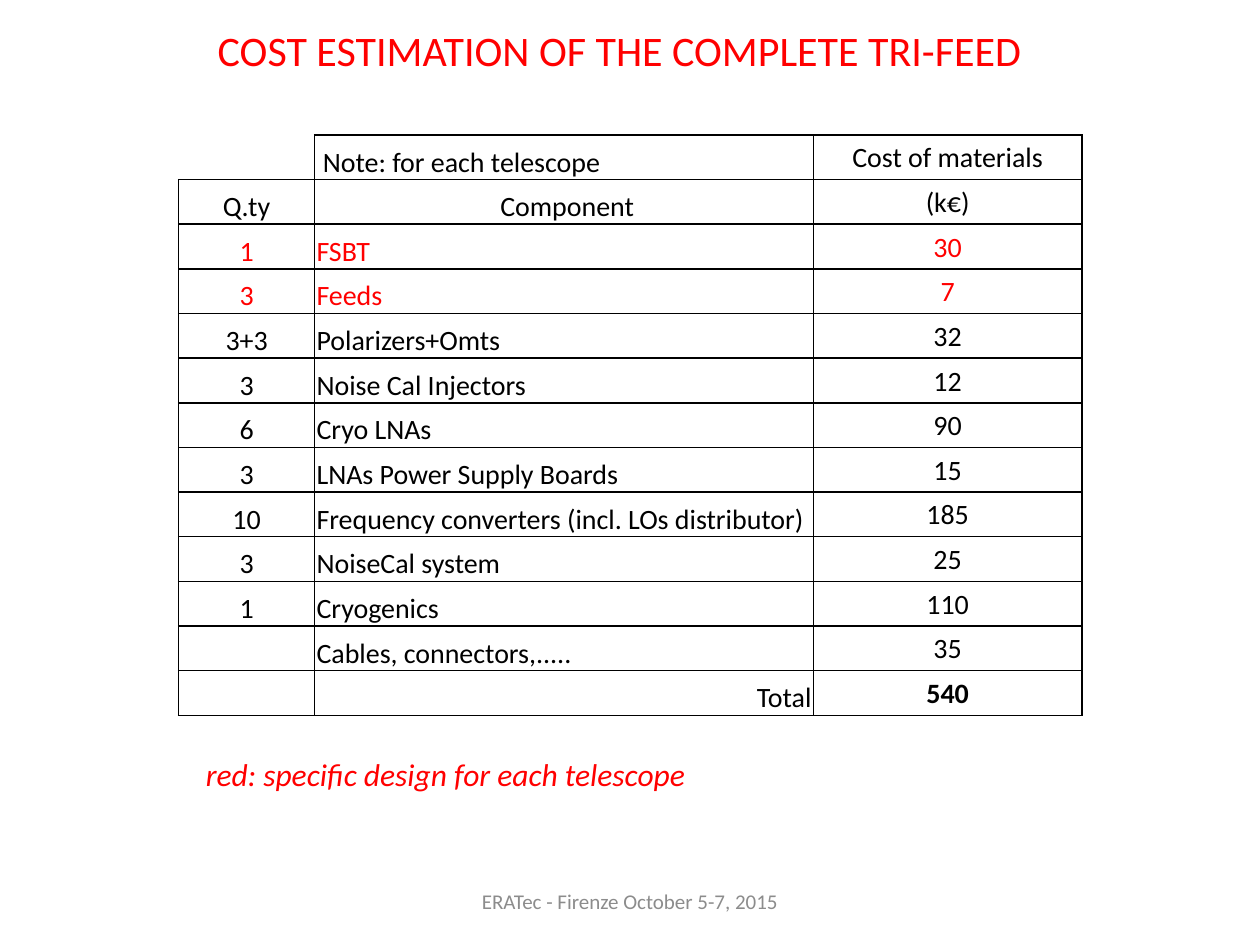
import lxml.etree
import pptx
import pptx.dml.color
import pptx.enum.text
import pptx.oxml.ns
import pptx.util
from pptx.util import Cm

BLACK = pptx.dml.color.RGBColor(0x00, 0x00, 0x00)
RED = pptx.dml.color.RGBColor(0xFF, 0x00, 0x00)
GRAY = pptx.dml.color.RGBColor(0x8C, 0x8C, 0x8C)
FONT = "Calibri"
ALIGN = pptx.enum.text.PP_ALIGN
ANCHOR = pptx.enum.text.MSO_ANCHOR

COLUMN_SHARES = (1.08, 3.96, 2.13)
RED_ROWS = (2, 3)
COSTS = (
    ("", " Note: for each telescope", "Cost of materials"),
    ("Q.ty", " Component", "(k€)"),
    ("1", "FSBT", "30"),
    ("3", "Feeds", "7"),
    ("3+3", "Polarizers+Omts", "32"),
    ("3", "Noise Cal Injectors", "12"),
    ("6", "Cryo LNAs", "90"),
    ("3", "LNAs Power Supply Boards", "15"),
    ("10", "Frequency converters (incl. LOs distributor)", "185"),
    ("3", "NoiseCal system", "25"),
    ("1", "Cryogenics", "110"),
    ("", "Cables, connectors,.....", "35"),
    ("", "Total", "540"),
)
COMPONENT_ALIGN = {1: ALIGN.CENTER, len(COSTS) - 1: ALIGN.RIGHT}


def style_font(font, size, color):
    """Apply the slide typeface with a size and colour."""
    font.name = FONT
    font.size = pptx.util.Pt(size)
    font.color.rgb = color


def draw_borders(cell, sides):
    """Draw thin black lines on the given sides of a cell."""
    qn = pptx.oxml.ns.qn
    properties = cell._tc.get_or_add_tcPr()
    for side in sides:
        line = lxml.etree.SubElement(properties, qn(f"a:ln{side}"), w="12700")
        fill = lxml.etree.SubElement(line, qn("a:solidFill"))
        lxml.etree.SubElement(fill, qn("a:srgbClr"), val=str(BLACK))


def add_label(page, box, text, size, color, align=ALIGN.LEFT, anchor=ANCHOR.TOP, wrap=True):
    """Place one line of text in a box and return its run."""
    frame = page.shapes.add_textbox(*box).text_frame
    frame.word_wrap = wrap
    frame.vertical_anchor = anchor
    frame.text = text
    para = frame.paragraphs[0]
    para.alignment = align
    span = para.runs[0]
    style_font(span.font, size, color)
    return span


def fill_cell(cell, row, column, text):
    """Write and format one cell of the cost table."""
    cell.margin_left = cell.margin_right = cell.margin_top = Cm(0.04)
    cell.margin_bottom = 0
    cell.vertical_anchor = ANCHOR.MIDDLE if column == 2 else ANCHOR.BOTTOM
    draw_borders(cell, "RB" if row == column == 0 else "LRTB")
    cell.fill.background()
    cell.text = text
    para = cell.text_frame.paragraphs[0]
    para.alignment = COMPONENT_ALIGN.get(row, ALIGN.LEFT) if column == 1 else ALIGN.CENTER
    style_font(para.font, 16, BLACK)
    for span in para.runs:
        style_font(span.font, 16, RED if row in RED_ROWS else BLACK)
        span.font.bold = text == COSTS[-1][2]


def add_cost_table(page, box):
    """Build the cost table inside a box."""
    left, top, width, height = box
    table = page.shapes.add_table(len(COSTS), len(COLUMN_SHARES), left, top, width, height).table
    table.first_row = table.horz_banding = False
    for column, share in zip(table.columns, COLUMN_SHARES):
        column.width = int(width * share / sum(COLUMN_SHARES))
    for row, texts in enumerate(COSTS):
        table.rows[row].height = height // len(COSTS)
        for column, text in enumerate(texts):
            fill_cell(table.cell(row, column), row, column, text)


def build_cost_slide(deck):
    """Add the slide with title, cost table, legend and footer."""
    page = deck.slides.add_slide(deck.slide_layouts[6])
    add_cost_table(page, (Cm(3.6), Cm(2.72), Cm(18.21), Cm(11.7)))
    add_label(page, (Cm(4.14), Cm(0.36), Cm(17.1), Cm(1.28)),
              "COST ESTIMATION OF THE COMPLETE TRI-FEED", 24, RED)
    legend = add_label(page, (Cm(3.9), Cm(15.1), Cm(10.28), Cm(1.03)),
                       "red: specific design for each telescope", 18, RED, wrap=False)
    legend.font.italic = True
    add_label(page, (Cm(8.68), Cm(17.66), Cm(8.04), Cm(1.01)),
              "ERATec - Firenze October 5-7, 2015", 12, GRAY, ALIGN.CENTER, ANCHOR.MIDDLE)


def main():
    """Create and save the deck."""
    deck = pptx.Presentation()
    deck.slide_width, deck.slide_height = Cm(25.4), Cm(19.05)
    build_cost_slide(deck)
    deck.save("out.pptx")


if __name__ == "__main__":
    main()
